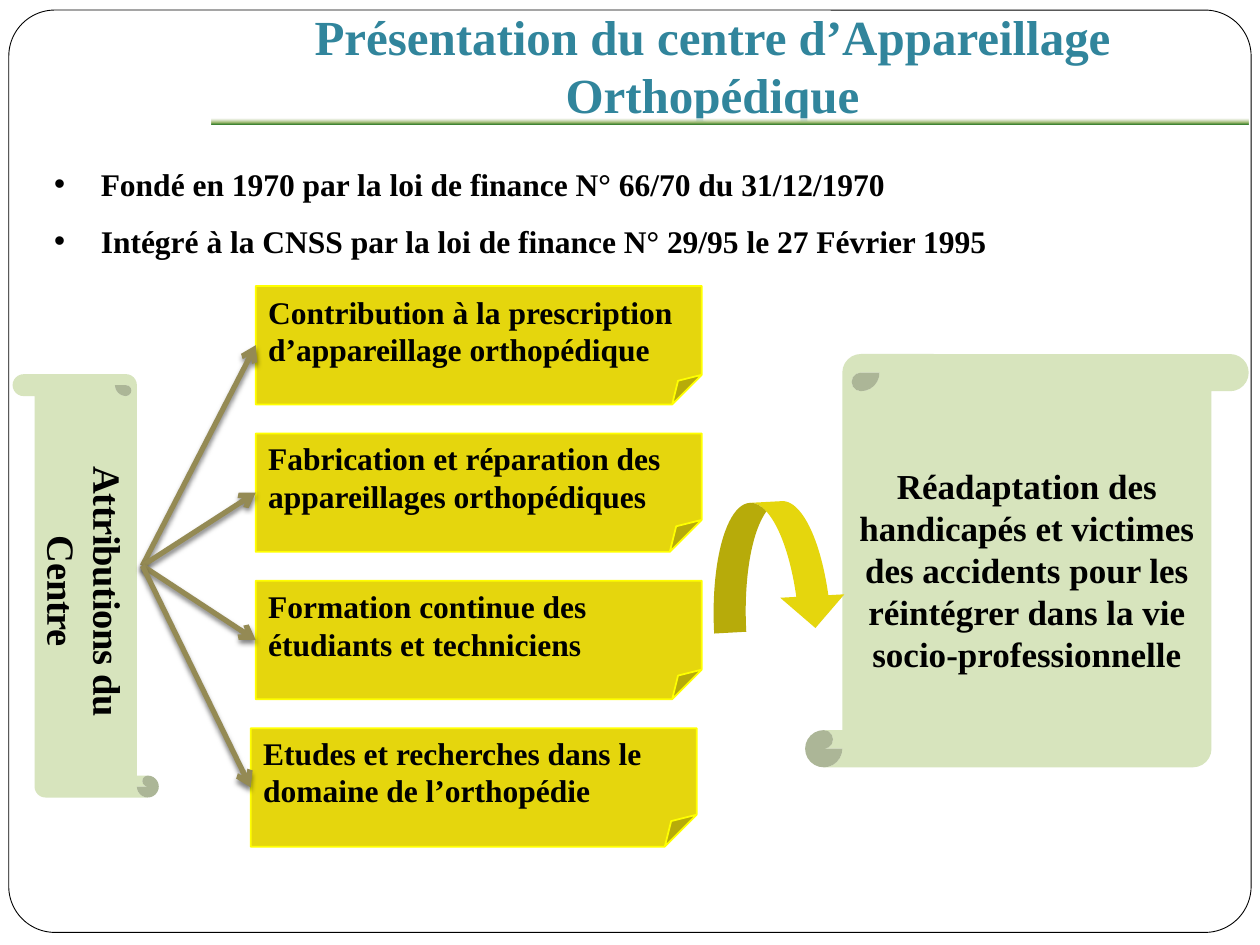
from lxml import etree
from pptx import Presentation
from pptx.dml.color import RGBColor
from pptx.enum.shapes import MSO_CONNECTOR, MSO_SHAPE
from pptx.enum.text import MSO_ANCHOR, MSO_AUTO_SIZE, PP_ALIGN
from pptx.oxml import parse_xml
from pptx.oxml.ns import nsdecls, qn
from pptx.util import Inches, Pt

LEFT, CENTER, JUSTIFY = PP_ALIGN.LEFT, PP_ALIGN.CENTER, PP_ALIGN.JUSTIFY
MIDDLE, TOP = MSO_ANCHOR.MIDDLE, MSO_ANCHOR.TOP
LEFT_SIDE = 1

FACTS = [
    "Fondé en 1970 par la loi de finance N° 66/70 du 31/12/1970",
    "Intégré à la CNSS par la loi de finance N° 29/95 le 27 Février 1995",
]
# Text, left edge, size of the folded corner
MISSIONS = [
    ("Contribution à la prescription d’appareillage orthopédique", 2.03, 0.25),
    ("Fabrication et réparation des appareillages orthopédiques", 2.03, 0.27),
    ("Formation continue des étudiants et techniciens", 2.03, 0.25),
    ("Etudes et recherches dans le domaine de l’orthopédie", 1.99, 0.27),
]
GOAL = ("Réadaptation des handicapés et victimes des accidents pour les "
        "réintégrer dans la vie socio-professionnelle")


def rgb(hex_color):
    return RGBColor.from_string(hex_color)


class SlideBuilder:
    font = "Times New Roman"
    black, white = "000000", "FFFFFF"
    teal, yellow, edge = "31859C", "E5D60D", "FFFF00"
    green, brown = "D7E4BD", "948A54"

    def __init__(self, slide):
        self.slide = slide

    def place(self, shape, box):
        shape.left, shape.top, shape.width, shape.height = map(Inches, box)

    def style_text(self, frame, size, color=black, align=CENTER, anchor=MIDDLE):
        frame.word_wrap = True
        frame.auto_size = MSO_AUTO_SIZE.NONE
        frame.vertical_anchor = anchor
        for paragraph in frame.paragraphs:
            paragraph.alignment = align
            for run in paragraph.runs:
                run.font.name = self.font
                run.font.size = Pt(size)
                run.font.bold = True
                run.font.color.rgb = rgb(color)

    def title(self, text, box):
        title = self.slide.shapes.title
        self.place(title, box)
        title.text_frame.text = text
        title.text_frame.margin_bottom = Inches(0.1)
        self.style_text(title.text_frame, 28, self.teal)

    def bullets(self, items, box):
        body = self.slide.placeholders[1]
        self.place(body, box)
        frame = body.text_frame
        frame.text = "\n".join(items)
        for paragraph in frame.paragraphs:
            paragraph.line_spacing = 1.5
            paragraph.space_before = Pt(0)
            properties = paragraph._p.get_or_add_pPr()
            properties.set("marL", str(Inches(0.37)))
            properties.set("indent", str(-Inches(0.37)))
            etree.SubElement(properties, qn("a:buChar"), char="•")
        self.style_text(frame, 18, align=JUSTIFY, anchor=TOP)

    def shape(self, kind, box, fill, line=None, width=1, adjust=None, rotation=0):
        shape = self.slide.shapes.add_shape(kind, *map(Inches, box))
        shape.shadow.inherit = False
        shape.rotation = rotation
        shape.fill.solid()
        shape.fill.fore_color.rgb = rgb(fill)
        if line:
            shape.line.color.rgb = rgb(line)
            shape.line.width = Pt(width)
        else:
            shape.line.fill.background()
        if adjust is not None:
            self.set_adjustment(shape, adjust)
        return shape

    def set_adjustment(self, shape, value):
        """Set the single guide in XML, as folded corners list no adjustments."""
        geometry = shape._element.spPr.find(qn("a:prstGeom"))
        for old_guides in geometry.findall(qn("a:avLst")):
            geometry.remove(old_guides)
        guides = etree.SubElement(geometry, qn("a:avLst"))
        etree.SubElement(guides, qn("a:gd"), name="adj",
                         fmla=f"val {round(value * 100000)}")

    def labelled(self, text, size, *args, align=CENTER, **options):
        shape = self.shape(*args, **options)
        shape.text_frame.text = text
        self.style_text(shape.text_frame, size, align=align)
        return shape

    def frame(self, box):
        """Outline of the page, behind everything else."""
        outline = self.shape(MSO_SHAPE.ROUNDED_RECTANGLE, box, self.white,
                             self.black, 0.5, adjust=0.05)
        self.slide.shapes._spTree.insert(2, outline._element)

    def gradient_rule(self, box):
        rule = self.shape(MSO_SHAPE.RECTANGLE, box, self.white)
        properties = rule._element.spPr
        gradient = parse_xml(
            f'<a:gradFill {nsdecls("a")}><a:gsLst>'
            '<a:gs pos="0"><a:srgbClr val="FFFFFF"><a:alpha val="78000"/></a:srgbClr></a:gs>'
            '<a:gs pos="65000"><a:srgbClr val="9CB86E"/></a:gs>'
            '<a:gs pos="100000"><a:srgbClr val="156B13"/></a:gs>'
            '</a:gsLst><a:lin ang="5400000" scaled="0"/></a:gradFill>')
        properties.replace(properties.find(qn("a:solidFill")), gradient)

    def arrow(self, start, target):
        arrow = self.slide.shapes.add_connector(
            MSO_CONNECTOR.STRAIGHT, *map(Inches, start * 2))
        arrow.end_connect(target, LEFT_SIDE)
        arrow.line.color.rgb = rgb(self.brown)
        arrow.line.width = Pt(3)
        etree.SubElement(arrow.line._get_or_add_ln(), qn("a:tailEnd"), type="arrow")
        arrow._element.spPr.append(parse_xml(
            f'<a:effectLst {nsdecls("a")}>'
            f'<a:outerShdw blurRad="{Pt(3)}" dist="{Pt(2)}" dir="5400000">'
            '<a:srgbClr val="000000"><a:alpha val="50000"/></a:srgbClr>'
            '</a:outerShdw></a:effectLst>'))


def main():
    deck = Presentation()
    deck.slide_width, deck.slide_height = Inches(10), Inches(7.5)
    page = SlideBuilder(deck.slides.add_slide(deck.slide_layouts[1]))

    page.frame((0.07, 0.08, 9.86, 7.32))
    page.title("Présentation du centre d’Appareillage Orthopédique",
               (1.72, 0.15, 7.87, 0.78))
    page.gradient_rule((1.68, 0.94, 8.23, 0.05))
    page.bullets(FACTS, (0.33, 1.11, 9.16, 1.01))

    cards = [
        page.labelled(text, 18, MSO_SHAPE.FOLDED_CORNER,
                      (left, 2.27 + 1.17 * row, 3.54, 0.94), page.yellow,
                      page.edge, adjust=fold, align=LEFT)
        for row, (text, left, fold) in enumerate(MISSIONS)
    ]

    duties = page.labelled("Attributions du Centre", 22, MSO_SHAPE.HORIZONTAL_SCROLL,
                           (-1, 4.07, 3.36, 1.16), page.green,
                           adjust=0.15, rotation=90)
    duties.text_frame.paragraphs[0].runs[0].font._element.set("spc", "-20")
    page.labelled(GOAL, 20, MSO_SHAPE.VERTICAL_SCROLL,
                  (6.39, 2.81, 3.52, 3.28), page.green, adjust=0.09)
    page.shape(MSO_SHAPE.CURVED_DOWN_ARROW, (5.64, 3.98, 1.06, 1.02),
               page.yellow, rotation=356.9)

    for card in cards:
        page.arrow((1.13, 4.49), card)

    deck.save("out.pptx")


if __name__ == "__main__":
    main()
